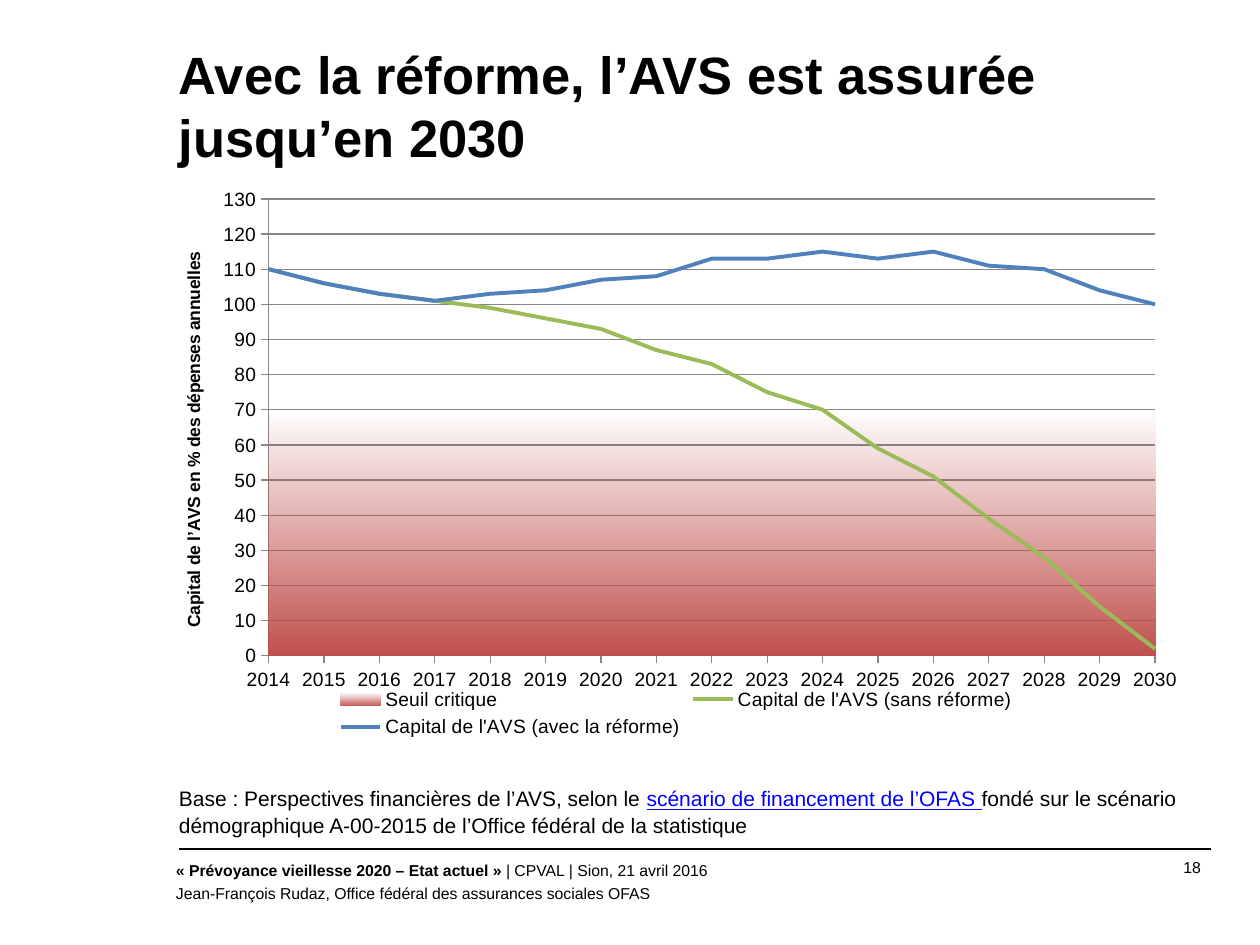
from lxml import etree
from pptx import Presentation
from pptx.chart.data import CategoryChartData
from pptx.dml.color import RGBColor
from pptx.enum.chart import XL_CHART_TYPE, XL_LEGEND_POSITION, XL_TICK_MARK
from pptx.enum.shapes import MSO_CONNECTOR
from pptx.enum.text import MSO_ANCHOR, MSO_AUTO_SIZE, PP_ALIGN
from pptx.oxml import parse_xml
from pptx.oxml.ns import nsdecls, qn
from pptx.util import Emu, Pt

PX_PER_INCH = 126
LEFT = 179

YEARS = [str(year) for year in range(2014, 2031)]
THRESHOLD = [70] * len(YEARS)
WITHOUT_REFORM = [110, 106, 103, 101, 99, 96, 93, 87, 83, 75, 70, 59, 51, 39, 28, 14, 2]
WITH_REFORM = [110, 106, 103, 101, 103, 104, 107, 108, 113, 113, 115, 113, 115, 111, 110, 104, 100]


def px(length):
    return Emu(round(length * 914400 / PX_PER_INCH))


def rgb(value):
    return RGBColor.from_string(value)


def style_font(font, size, color="000000", bold=False, underline=False):
    font.name = "Arial"
    font.size = Pt(size)
    font.bold = bold
    font.underline = underline
    font.color.rgb = rgb(color)


def write(paragraph, text, size=12, align=PP_ALIGN.LEFT, spacing=None, **style):
    """Append a formatted run to the paragraph."""
    paragraph.alignment = align
    if spacing:
        paragraph.line_spacing = Pt(spacing)
    run = paragraph.add_run()
    run.text = text
    style_font(run.font, size, **style)


def fade_upwards(series, color):
    """Fill from solid at the bottom to fully transparent at the top."""
    fill = series.format.fill
    fill.gradient()
    fill.gradient_angle = 90
    for stop, position in zip(fill.gradient_stops, (0, 1)):
        stop.color.rgb = rgb(color)
        stop.position = position
    top_color = series._element.findall(".//" + qn("a:srgbClr"))[-1]
    etree.SubElement(top_color, qn("a:alpha")).set("val", "0")


def move_to_area(series):
    """Draw a line series as an area on the same axes."""
    element = series._element
    for tag in ("c:marker", "c:smooth"):
        for child in element.findall(qn(tag)):
            element.remove(child)
    line_chart = element.getparent()
    area = parse_xml(
        f'<c:areaChart {nsdecls("c")}><c:grouping val="standard"/>'
        '<c:varyColors val="0"/></c:areaChart>')
    area.append(element)
    for axis in line_chart.findall(qn("c:axId")):
        etree.SubElement(area, qn("c:axId")).set("val", axis.get("val"))
    line_chart.addprevious(area)


def place_plot(chart, x, y, w, h):
    """Fix the inner plot area, in fractions of the chart."""
    plot_area = chart._chartSpace.chart.plotArea
    for layout in plot_area.findall(qn("c:layout")):
        plot_area.remove(layout)
    sizes = "".join(f'<c:{tag} val="{value}"/>'
                    for tag, value in zip("xywh", (x, y, w, h)))
    plot_area.insert(0, parse_xml(
        f'<c:layout {nsdecls("c")}><c:manualLayout><c:layoutTarget val="inner"/>'
        f'<c:xMode val="edge"/><c:yMode val="edge"/>{sizes}</c:manualLayout></c:layout>'))


class SlideBuilder:
    def __init__(self, presentation, grid="868686"):
        self.slide = presentation.slides.add_slide(presentation.slide_layouts[5])
        self.grid = grid

    def frame(self, shape, box, inset=0):
        shape.left, shape.top, shape.width, shape.height = map(px, box)
        frame = shape.text_frame
        frame.word_wrap = True
        frame.auto_size = MSO_AUTO_SIZE.NONE
        frame.vertical_anchor = MSO_ANCHOR.TOP
        frame.margin_left = frame.margin_right = 0
        frame.margin_top = frame.margin_bottom = px(inset)
        return frame

    def title(self, text, box):
        frame = self.frame(self.slide.shapes.title, box)
        write(frame.paragraphs[0], text, size=30, bold=True, spacing=36)

    def text_box(self, box, inset=0):
        shape = self.slide.shapes.add_textbox(*map(px, box))
        return self.frame(shape, box, inset)

    def rule(self, left, right, y):
        line = self.slide.shapes.add_connector(
            MSO_CONNECTOR.STRAIGHT, px(left), px(y), px(right), px(y))
        line.line.color.rgb = rgb("000000")
        line.line.width = Pt(0.75)
        etree.SubElement(line._element.spPr, qn("a:effectLst"))

    def capital_chart(self, box):
        data = CategoryChartData(number_format="General")
        data.categories = YEARS
        data.add_series("Seuil critique", THRESHOLD)
        data.add_series("Capital de l'AVS (sans réforme)", WITHOUT_REFORM)
        data.add_series("Capital de l'AVS (avec la réforme)", WITH_REFORM)
        chart = self.slide.shapes.add_chart(
            XL_CHART_TYPE.LINE, *map(px, box), data).chart
        style_font(chart.font, 11)
        chart.has_title = False
        chart.has_legend = True
        chart.legend.position = XL_LEGEND_POSITION.BOTTOM
        chart.legend.include_in_layout = False

        chart.plots[0].vary_by_categories = False
        threshold, *capitals = chart.plots[0].series
        for series, color in zip(capitals, ("9BBB59", "4F81BD")):
            series.smooth = False
            series.format.line.color.rgb = rgb(color)
            series.format.line.width = Pt(2.25)
        fade_upwards(threshold, "C0504D")
        move_to_area(threshold)
        self.axes(chart)
        place_plot(chart, 0.09, 0.032, 0.891, 0.813)

    def axes(self, chart):
        years, percent = chart.category_axis, chart.value_axis
        percent.minimum_scale, percent.maximum_scale, percent.major_unit = 0, 130, 10
        percent.tick_labels.number_format = "#,##0"
        percent.tick_labels.number_format_is_linked = False
        percent.has_major_gridlines = True
        for axis in (years, percent):
            axis.major_tick_mark = XL_TICK_MARK.OUTSIDE
            axis.minor_tick_mark = XL_TICK_MARK.NONE
        for part in (years, percent, percent.major_gridlines):
            part.format.line.color.rgb = rgb(self.grid)
            part.format.line.width = Pt(0.75)
        write(percent.axis_title.text_frame.paragraphs[0],
              "Capital de l’AVS en % des dépenses annuelles",
              size=10, bold=True, align=PP_ALIGN.CENTER)


def main():
    presentation = Presentation()
    presentation.slide_width, presentation.slide_height = px(1260), px(945)
    page = SlideBuilder(presentation)

    page.title("Avec la réforme, l’AVS est assurée jusqu’en 2030", (LEFT, 42, 1032, 138))
    page.capital_chart((LEFT, 181, 998, 562))

    base = page.text_box((LEFT, 779, 1032, 63), inset=6).paragraphs[0]
    write(base, "Base\u00a0: Perspectives financières de l’AVS, selon le ", spacing=15)
    write(base, "scénario de financement de l’OFAS ", color="0000FF", underline=True)
    write(base, "fondé sur le scénario démographique A-00-2015 "
                "de l’Office fédéral de la statistique")

    page.rule(LEFT, 1211, 849)
    footer = page.text_box((176, 861, 942, 59))
    event = footer.paragraphs[0]
    write(event, "« Prévoyance vieillesse 2020 – Etat actuel » ", size=9, bold=True)
    write(event, "| CPVAL | Sion, 21 avril 2016", size=9)
    author = footer.add_paragraph()
    author.space_before = Pt(2)
    write(author, "Jean-François Rudaz, Office fédéral des assurances sociales OFAS", size=9)
    number = page.text_box((1151, 858, 50, 20)).paragraphs[0]
    write(number, "18", size=9, align=PP_ALIGN.RIGHT)

    presentation.save("out.pptx")


if __name__ == "__main__":
    main()
